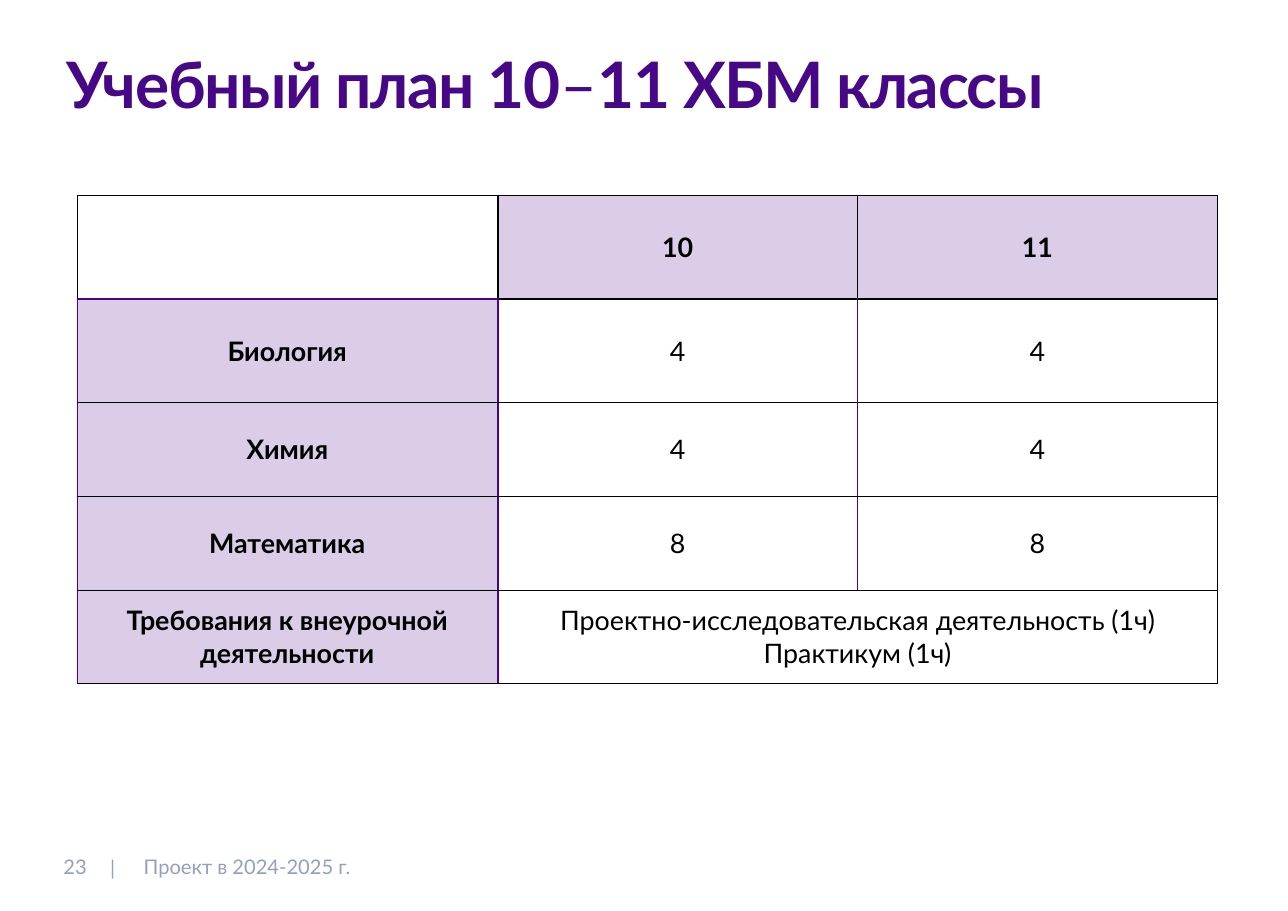
from dataclasses import dataclass

from lxml.etree import SubElement
from pptx import Presentation
from pptx.dml.color import RGBColor
from pptx.enum.text import MSO_ANCHOR, MSO_AUTO_SIZE, PP_ALIGN
from pptx.oxml.ns import qn
from pptx.util import Pt

COLORS = {"title": "460886", "accent": "4D008C", "ink": "000000", "footer": "939FC1"}
FONT = "Lato"
INSET = Pt(4)


@dataclass(frozen=True)
class FooterLabel:
    text: str
    left: float
    top: float
    width: float
    height: float
    align: PP_ALIGN
    anchor: MSO_ANCHOR
    wrap: bool


@dataclass(frozen=True)
class Edge:
    color: str
    width: float


THIN = Edge("ink", 1)
THICK = Edge("ink", 3)
ACCENT_THIN = Edge("accent", 1)
ACCENT_THICK = Edge("accent", 3)

TITLE_PARTS = [("Учебный план 10", True), ("–", False), ("11 ХБМ классы", True)]
FOOTER = [
    FooterLabel("|", 158, 1270, 20, 44.6, PP_ALIGN.CENTER, MSO_ANCHOR.MIDDLE, False),
    FooterLabel("23", 86.9, 1269.4, 50, 44.6, PP_ALIGN.CENTER, MSO_ANCHOR.BOTTOM, False),
    FooterLabel("Проект в 2024-2025 г.", 210.2, 1270, 1368.7, 44,
                PP_ALIGN.LEFT, MSO_ANCHOR.MIDDLE, True),
]
PLAN = [
    ["", "10", "11"],
    ["Биология", "4", "4"],
    ["Химия", "4", "4"],
    ["Математика", "8", "8"],
    ["Требования к внеурочной деятельности",
     "Проектно-исследовательская деятельность (1ч)\nПрактикум (1ч)", ""],
]
COLUMN_WIDTHS = [627.4, 536.6, 536.6]
ROW_HEIGHTS = [154.6, 154.6, 139.6, 139.6, 139.6]
LAST_ROW = len(PLAN) - 1


def style_font(font, size: float, color: str, bold: bool = False) -> None:
    font.name = FONT
    font.size = Pt(size)
    font.bold = bold
    font.color.rgb = RGBColor.from_string(COLORS[color])


def add_box(page, left: float, top: float, width: float, height: float):
    box = page.shapes.add_textbox(Pt(left), Pt(top), Pt(width), Pt(height))
    frame = box.text_frame
    frame.margin_left = frame.margin_right = INSET
    frame.margin_top = frame.margin_bottom = INSET
    return frame


def add_title(page) -> None:
    frame = add_box(page, 95, 85, 1730, 138)
    frame.word_wrap = True
    para = frame.paragraphs[0]
    para.line_spacing = 0.8
    for text, bold in TITLE_PARTS:
        span = para.add_run()
        span.text = text
        style_font(span.font, 95.4, "title", bold)
        span.font._element.set("spc", "-210")


def add_footer_label(page, label: FooterLabel) -> None:
    frame = add_box(page, label.left, label.top, label.width, label.height)
    frame.word_wrap = label.wrap
    frame.auto_size = MSO_AUTO_SIZE.SHAPE_TO_FIT_TEXT
    frame.vertical_anchor = label.anchor
    para = frame.paragraphs[0]
    para.text = label.text
    para.alignment = label.align
    style_font(para.runs[0].font, 30, "footer")


def vertical_edge(row: int, boundary: int) -> Edge:
    """Line at the given column boundary, counted from the left."""
    if boundary == 0:
        return THIN if row == 0 else ACCENT_THIN
    if boundary == 1:
        return THICK if row == 0 else ACCENT_THICK
    return ACCENT_THICK if boundary == 2 and row > 0 else THIN


def horizontal_edge(boundary: int, column: int) -> Edge:
    """Line at the given row boundary, counted from the top."""
    if boundary == 1:
        return ACCENT_THICK if column == 0 else THICK
    return THIN


def draw_borders(cell, row: int, column: int) -> None:
    right_boundary = column + (cell.span_width if cell.is_merge_origin else 1)
    edges = {
        "a:lnL": vertical_edge(row, column),
        "a:lnR": vertical_edge(row, right_boundary),
        "a:lnT": horizontal_edge(row, column),
        "a:lnB": horizontal_edge(row + 1, column),
    }
    properties = cell._tc.get_or_add_tcPr()
    for tag, edge in edges.items():
        line = SubElement(properties, qn(tag), w=str(Pt(edge.width)))
        fill = SubElement(line, qn("a:solidFill"))
        SubElement(fill, qn("a:srgbClr"), val=COLORS[edge.color])


def fill_cell(cell, tinted: bool) -> None:
    if not tinted:
        cell.fill.background()
        return
    cell.fill.solid()
    cell.fill.fore_color.rgb = RGBColor.from_string(COLORS["accent"])
    color = cell._tc.tcPr.find(qn("a:solidFill")).find(qn("a:srgbClr"))
    SubElement(color, qn("a:alpha"), val="20000")


def add_plan(page) -> None:
    frame = page.shapes.add_table(len(PLAN), len(COLUMN_WIDTHS), Pt(114.5), Pt(290.9),
                                  Pt(sum(COLUMN_WIDTHS)), Pt(sum(ROW_HEIGHTS)))
    table = frame.table
    table.first_row = table.horz_banding = False
    for column, width in zip(table.columns, COLUMN_WIDTHS):
        column.width = Pt(width)
    for row, height in zip(table.rows, ROW_HEIGHTS):
        row.height = Pt(height)
    table.cell(LAST_ROW, 1).merge(table.cell(LAST_ROW, 2))

    for row, texts in enumerate(PLAN):
        for column, text in enumerate(texts):
            cell = table.cell(row, column)
            heading = row == 0 or column == 0
            draw_borders(cell, row, column)
            fill_cell(cell, heading and text != "")
            cell.vertical_anchor = MSO_ANCHOR.MIDDLE
            cell.margin_left = cell.margin_right = INSET
            cell.margin_top = cell.margin_bottom = INSET
            cell.text_frame.text = text
            for para in cell.text_frame.paragraphs:
                para.alignment = PP_ALIGN.CENTER
                for span in para.runs:
                    style_font(span.font, 40, "ink", heading)


def main() -> None:
    deck = Presentation()
    deck.slide_width, deck.slide_height = Pt(1920.24), Pt(1357.92)
    page = deck.slides.add_slide(deck.slide_layouts[6])

    # Title
    add_title(page)
    # Curriculum table
    add_plan(page)
    # Footer
    for label in FOOTER:
        add_footer_label(page, label)

    deck.save("out.pptx")


if __name__ == "__main__":
    main()
